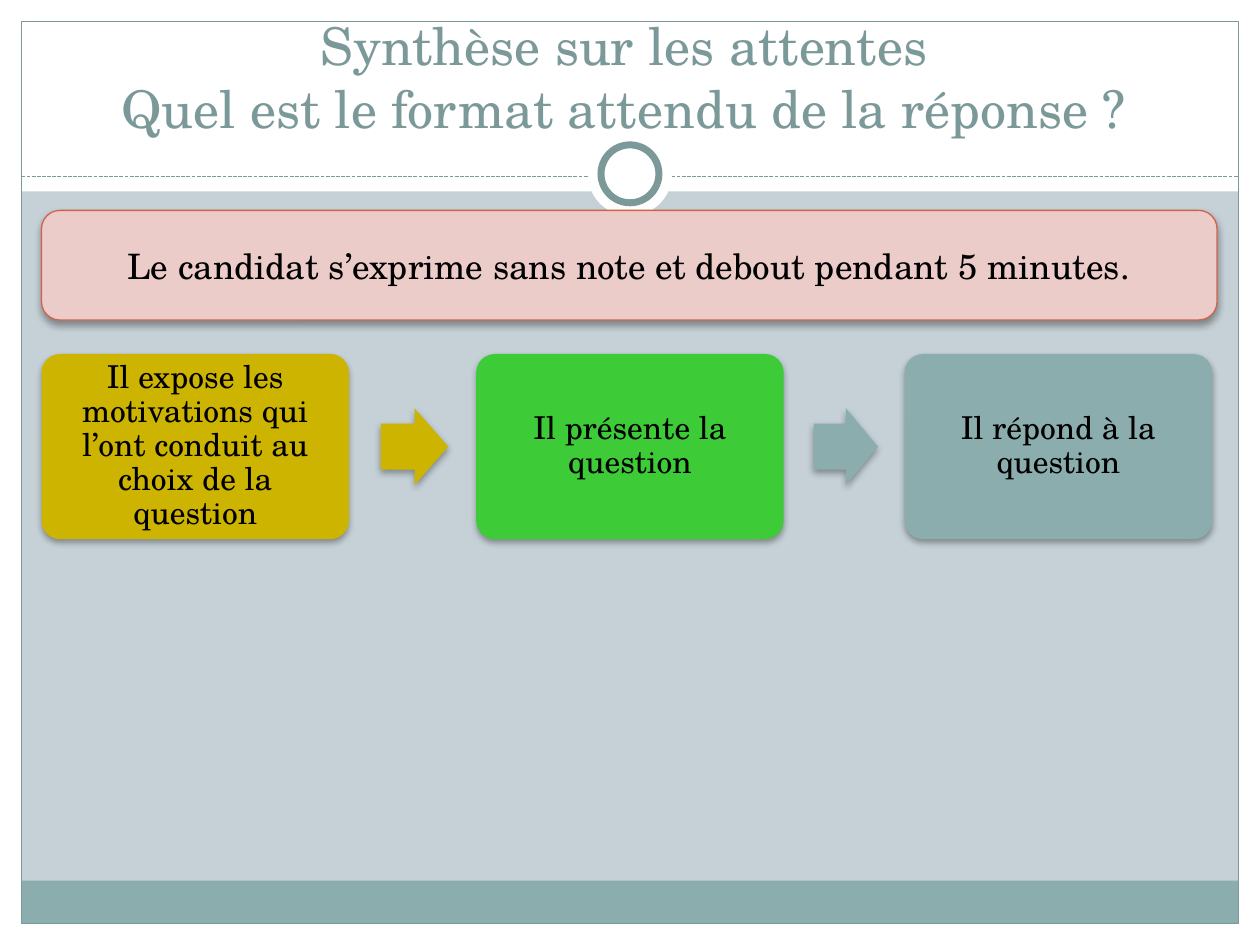
import pptx
import pptx.util
import pptx.dml.color
import pptx.enum.dml
import pptx.enum.shapes
import pptx.enum.text
import pptx.oxml
import pptx.oxml.ns
from lxml import etree

TITLE = "Synthèse sur les attentes\vQuel est le format attendu de la réponse ?"
RULE = "Le candidat s’exprime sans note et debout pendant 5 minutes."
STEPS = [
    (3.3, "gold", "Il expose les motivations qui l’ont conduit au choix de la question"),
    (37.8, "green", "Il présente la question"),
    (71.8, "teal", "Il répond à la question"),
]
ARROW_COLORS = ["gold", "teal"]

THEME = {
    "font": "TeX Gyre Schola",
    "title_size": 29.7, "rule_size": 20, "step_size": 18,
    "background": "C5D1D7", "white": "FFFFFF", "black": "000000",
    "frame": "7C999A", "teal": "8CADAE", "gold": "CCB400", "green": "3ECB38",
    "pink": "ECCCC9", "red": "D16349",
}

COLUMNS, ROWS = 100, 75
MARGIN = 1.7
STEP_TOP, STEP_WIDTH, STEP_HEIGHT = 28.1, 24.4, 14.7
ARROW_HEIGHT, ARROW_SHARE, ARROW_OFFSET = 6.1, 0.53, 0.25
SHAPES = pptx.enum.shapes.MSO_SHAPE

deck = pptx.Presentation()
deck.slide_width = pptx.util.Inches(10)
deck.slide_height = pptx.util.Inches(7.5)
page = deck.slides.add_slide(deck.slide_layouts[6])


def color(name):
    return pptx.dml.color.RGBColor.from_string(THEME[name])


def across(columns):
    return round(deck.slide_width * columns / COLUMNS)


def down(rows):
    return round(deck.slide_height * rows / ROWS)


def place(left, top, width, height):
    return across(left), down(top), across(width), down(height)


def cast_shadow(shape):
    effects = shape._element.spPr.find(pptx.oxml.ns.qn("a:effectLst"))
    outer = etree.SubElement(
        effects, pptx.oxml.ns.qn("a:outerShdw"),
        blurRad=str(pptx.util.Pt(4)), dist=str(pptx.util.Pt(2)),
        dir="5400000", rotWithShape="0")
    shade = etree.SubElement(outer, pptx.oxml.ns.qn("a:srgbClr"), val=THEME["black"])
    etree.SubElement(shade, pptx.oxml.ns.qn("a:alpha"), val="35000")


def add_shape(kind, area, fill=None, line=None, weight=0.75, shadow=False, adjust=()):
    shape = page.shapes.add_shape(kind, *place(*area))
    if fill:
        shape.fill.solid()
        shape.fill.fore_color.rgb = color(fill)
    else:
        shape.fill.background()
    if line:
        shape.line.color.rgb = color(line)
        shape.line.width = pptx.util.Pt(weight)
    else:
        shape.line.fill.background()
    for index, value in enumerate(adjust):
        shape.adjustments[index] = value
    shape.shadow.inherit = False
    if shadow:
        cast_shadow(shape)
    return shape


def write(box, text, size, ink, anchor="MIDDLE", inset=None, spacing=None):
    frame = box.text_frame
    frame.word_wrap = True
    frame.vertical_anchor = pptx.enum.text.MSO_ANCHOR[anchor]
    if inset is not None:
        frame.margin_left = frame.margin_right = pptx.util.Inches(inset)
        frame.margin_top = frame.margin_bottom = pptx.util.Inches(inset)
    frame.text = text
    para = frame.paragraphs[0]
    para.alignment = pptx.enum.text.PP_ALIGN.CENTER
    if spacing:
        para.line_spacing = spacing
    for span in para.runs:
        span.font.name = THEME["font"]
        span.font.size = pptx.util.Pt(THEME[size])
        span.font.color.rgb = color(ink)


def draw_background():
    page.background.fill.solid()
    page.background.fill.fore_color.rgb = color("background")
    inner_width, inner_height = COLUMNS - 2 * MARGIN, ROWS - 2 * MARGIN
    for area in [
        (0, ROWS - MARGIN, COLUMNS, MARGIN),
        (0, 0, COLUMNS, 15.2),
        (0, 0, MARGIN, ROWS),
        (COLUMNS - MARGIN, 0, MARGIN, ROWS),
    ]:
        add_shape(SHAPES.RECTANGLE, area, "white")
    add_shape(SHAPES.RECTANGLE, (MARGIN, 69.9, inner_width, 3.4), "teal")
    add_shape(SHAPES.RECTANGLE, (MARGIN, MARGIN, inner_width, inner_height), line="frame")
    divider = page.shapes.add_connector(
        pptx.enum.shapes.MSO_CONNECTOR.STRAIGHT,
        across(MARGIN), down(14), across(COLUMNS - MARGIN), down(14))
    divider.line.color.rgb = color("frame")
    divider.line.width = pptx.util.Pt(0.75)
    divider.line.dash_style = pptx.enum.dml.MSO_LINE.SQUARE_DOT
    etree.SubElement(divider._element.spPr, pptx.oxml.ns.qn("a:effectLst"))
    for size, line in [(6.7, None), (4.6, "frame")]:
        area = ((COLUMNS - size) / 2, 13.8 - size / 2, size, size)
        add_shape(SHAPES.OVAL, area, "white", line, 4)


def draw_steps():
    for left, fill, text in STEPS:
        box = add_shape(
            SHAPES.ROUNDED_RECTANGLE, (left, STEP_TOP, STEP_WIDTH, STEP_HEIGHT),
            fill, shadow=True, adjust=[0.1])
        write(box, text, "step_size", "black", inset=0.07, spacing=0.9)
    arrow_top = STEP_TOP + (STEP_HEIGHT - ARROW_HEIGHT) / 2
    for before, after, fill in zip(STEPS, STEPS[1:], ARROW_COLORS):
        start = before[0] + STEP_WIDTH
        gap = after[0] - start
        area = (start + gap * ARROW_OFFSET, arrow_top, gap * ARROW_SHARE, ARROW_HEIGHT)
        add_shape(SHAPES.RIGHT_ARROW, area, fill, shadow=True, adjust=[0.6, 0.5])


draw_background()
title = page.shapes.add_textbox(*place(2.9, 3.2, 93.3, 8.3))
write(title, TITLE, "title_size", "frame", anchor="BOTTOM")
rule = add_shape(
    SHAPES.ROUNDED_RECTANGLE, (3.3, 16.7, 93.3, 8.7), "pink", "red", shadow=True)
write(rule, RULE, "rule_size", "black")
draw_steps()
deck.save("out.pptx")
